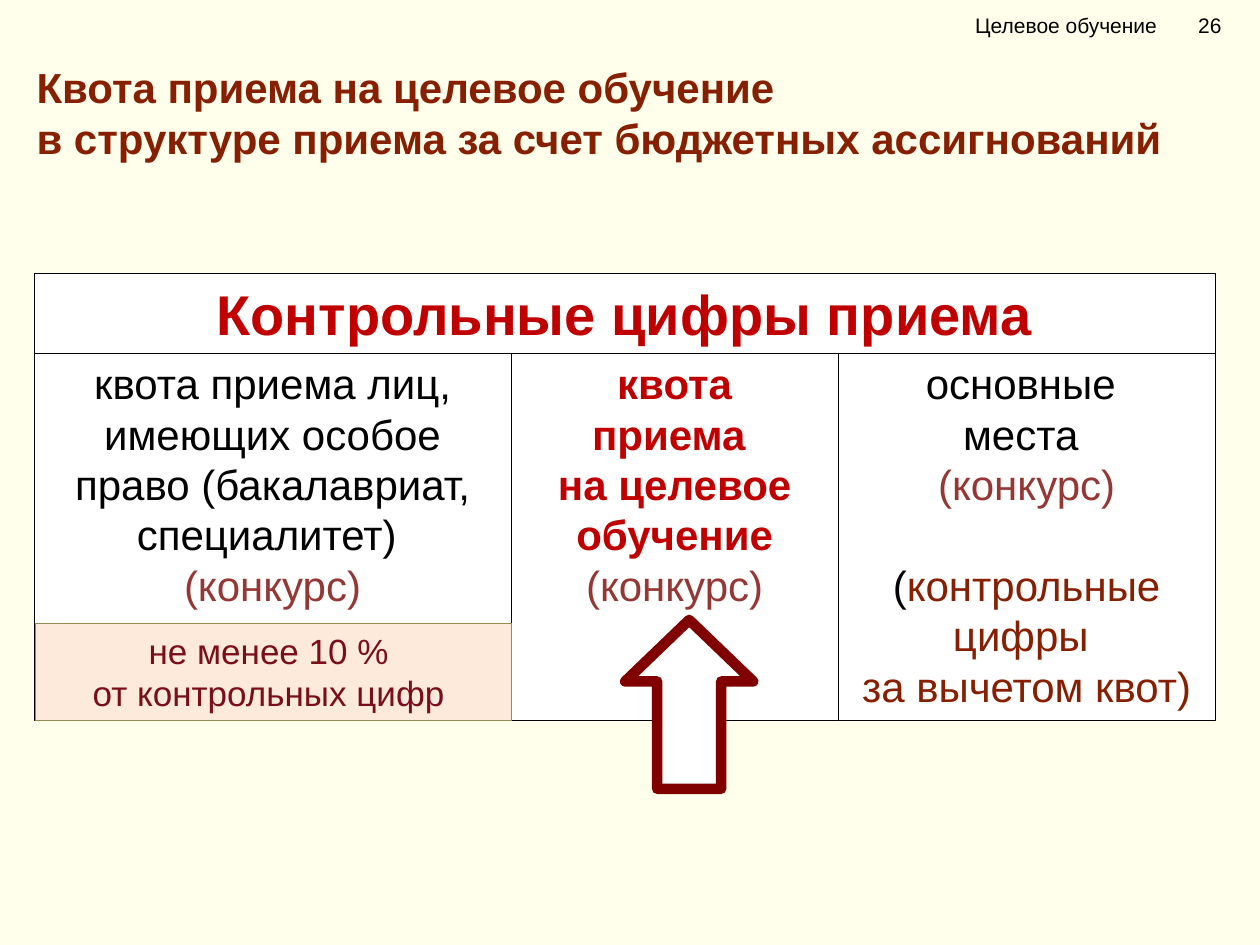
from dataclasses import dataclass

from lxml.etree import SubElement
from pptx import Presentation
from pptx.dml.color import RGBColor
from pptx.enum.shapes import MSO_SHAPE
from pptx.enum.text import MSO_ANCHOR, MSO_AUTO_SIZE, PP_ALIGN
from pptx.oxml.ns import qn
from pptx.util import Pt


@dataclass(frozen=True)
class Theme:
    font: str = "Arial"
    background: str = "FFFFEB"
    white: str = "FFFFFF"
    black: str = "000000"
    title: str = "871F03"
    accent: str = "C00000"
    contest: str = "953735"
    note_text: str = "7B0F19"
    note_fill: str = "FDEADA"
    note_line: str = "948A54"
    arrow: str = "800000"
    header_size: int = 12
    note_size: int = 20
    body_size: int = 24
    heading_size: int = 32
    leading: float = 1.2


class SlideBuilder:
    def __init__(self, presentation, theme):
        self.theme = theme
        self.slide = presentation.slides.add_slide(presentation.slide_layouts[5])
        fill = self.slide.background.fill
        fill.solid()
        fill.fore_color.rgb = RGBColor.from_string(theme.background)

    def add_text(self, shape, lines, size, alignment=PP_ALIGN.CENTER, anchor=MSO_ANCHOR.TOP):
        frame = shape.text_frame
        frame.word_wrap = True
        frame.auto_size = MSO_AUTO_SIZE.NONE
        frame.vertical_anchor = anchor
        frame.margin_left = frame.margin_right = Pt(7.2)
        frame.margin_top = frame.margin_bottom = Pt(3.6)
        for index, runs in enumerate(lines):
            paragraph = frame.add_paragraph() if index else frame.paragraphs[0]
            paragraph.alignment = alignment
            paragraph.line_spacing = Pt(size * self.theme.leading)
            paragraph.space_before = paragraph.space_after = Pt(0)
            for text, color, bold in runs:
                run = paragraph.add_run()
                run.text = text
                run.font.name = self.theme.font
                run.font.size = Pt(size)
                run.font.bold = bold
                run.font.color.rgb = RGBColor.from_string(color)
        return frame

    def title(self, left, top, width, height, lines):
        shape = self.slide.shapes.title
        shape.left, shape.top, shape.width, shape.height = map(Pt, (left, top, width, height))
        self.add_text(shape, lines, self.theme.body_size, PP_ALIGN.LEFT)

    def header(self, left, top, width, height, text, indent, tab):
        shape = self.slide.shapes.add_textbox(*map(Pt, (left, top, width, height)))
        frame = self.add_text(shape, [[(text, self.theme.black, False)]],
                              self.theme.header_size, PP_ALIGN.LEFT, MSO_ANCHOR.MIDDLE)
        frame.margin_left = Pt(indent)
        properties = frame.paragraphs[0]._p.get_or_add_pPr()
        tabs = SubElement(properties, qn("a:tabLst"))
        SubElement(tabs, qn("a:tab"), pos=str(int(Pt(tab))), algn="l")

    def shape(self, kind, left, top, width, height, fill, line, line_width):
        shape = self.slide.shapes.add_shape(kind, *map(Pt, (left, top, width, height)))
        shape.shadow.inherit = False
        shape.fill.solid()
        shape.fill.fore_color.rgb = RGBColor.from_string(fill)
        shape.line.color.rgb = RGBColor.from_string(line)
        shape.line.width = Pt(line_width)
        return shape

    def box(self, left, top, width, height, lines, size, fill=None, line=None):
        shape = self.shape(MSO_SHAPE.RECTANGLE, left, top, width, height,
                           fill or self.theme.white, line or self.theme.black, 0.25)
        return self.add_text(shape, lines, size)

    def up_arrow(self, left, top, width, height):
        shape = self.shape(MSO_SHAPE.RIGHT_ARROW, left, top, width, height,
                           self.theme.white, self.theme.arrow, 6)
        shape.rotation = 270
        shape.adjustments[0] = 0.5
        shape.adjustments[1] = 0.48


def main():
    theme = Theme()
    presentation = Presentation()
    presentation.slide_width, presentation.slide_height = Pt(720), Pt(540)
    builder = SlideBuilder(presentation, theme)

    builder.header(535.7, 0, 184.3, 28.8, "Целевое обучение\t26", 21.6, 127.4)
    builder.title(13.7, 31.7, 680.4, 66, [
        [("Квота приема на целевое обучение", theme.title, True)],
        [("в структуре приема за счет бюджетных ассигнований", theme.title, True)],
    ])

    contest = [("(конкурс)", theme.contest, False)]
    columns = [
        (272.4, [
            [("квота приема лиц, имеющих особое право (бакалавриат, специалитет) ",
              theme.black, False)],
            contest,
        ]),
        (187, [
            [("квота", theme.accent, True)],
            [("приема ", theme.accent, True)],
            [("на целевое обучение", theme.accent, True)],
            contest,
        ]),
        (215.3, [
            [("основные ", theme.black, False)],
            [("места ", theme.black, False)],
            contest,
            [("(", theme.black, False), ("контрольные цифры ", theme.title, False)],
            [("за вычетом квот)", theme.title, False)],
        ]),
    ]
    table_left, column_top, column_height = 19.6, 200.9, 210.9
    left = table_left
    for width, lines in columns:
        frame = builder.box(left, column_top, width, column_height, lines, theme.body_size)
        left += width
    frame.paragraphs[3].space_before = Pt(theme.body_size * theme.leading)

    builder.box(20.2, 356, 272.2, 55.6, [
        [("не менее 10 % ", theme.note_text, False)],
        [("от контрольных цифр ", theme.note_text, False)],
    ], theme.note_size, theme.note_fill, theme.note_line)
    builder.box(table_left, 156.2, left - table_left, 45.8,
                [[("Контрольные цифры приема", theme.accent, True)]], theme.heading_size)
    builder.up_arrow(345.6, 365.9, 96.5, 73.2)

    presentation.save("out.pptx")


if __name__ == "__main__":
    main()
